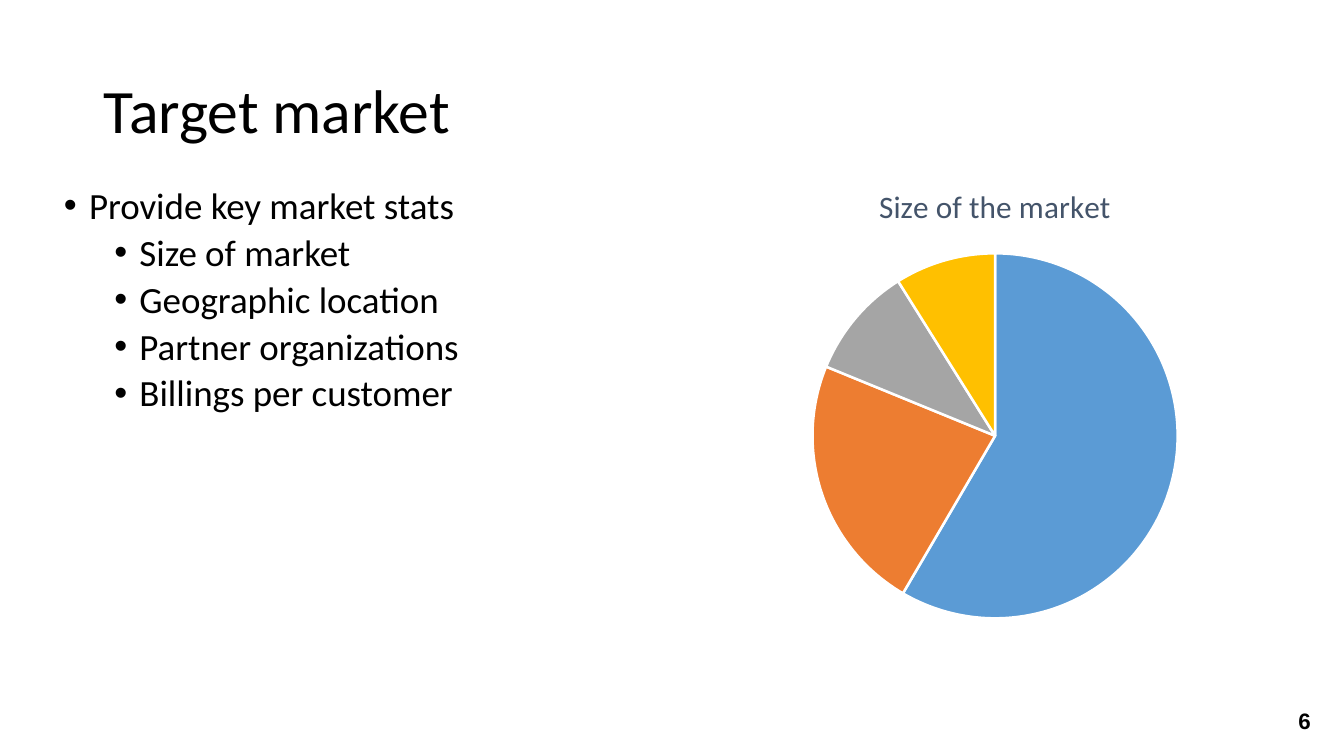
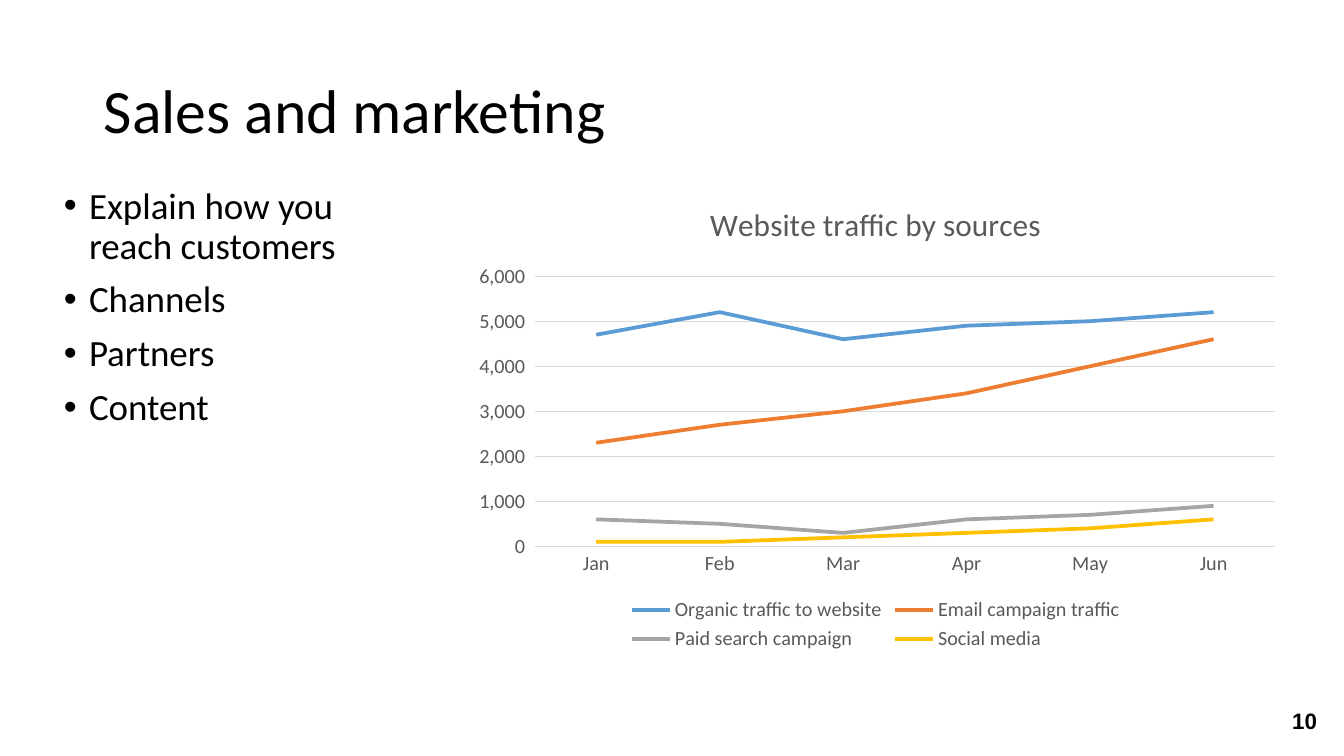
from lxml import etree
from pptx import Presentation
from pptx.chart.data import CategoryChartData
from pptx.dml.color import RGBColor
from pptx.enum.chart import XL_CHART_TYPE, XL_LEGEND_POSITION, XL_MARKER_STYLE, XL_TICK_MARK
from pptx.enum.text import MSO_ANCHOR, PP_ALIGN
from pptx.oxml.ns import qn
from pptx.util import Cm, Pt

PIE, LINE = XL_CHART_TYPE.PIE, XL_CHART_TYPE.LINE
BOTTOM_LEGEND = XL_LEGEND_POSITION.BOTTOM
NO_MARKER, NO_TICK = XL_MARKER_STYLE.NONE, XL_TICK_MARK.NONE
TOP, MIDDLE, BOTTOM = MSO_ANCHOR.TOP, MSO_ANCHOR.MIDDLE, MSO_ANCHOR.BOTTOM
CENTER = PP_ALIGN.CENTER

FONT, NUMBER_FONT = "Calibri", "Arial"
BLACK, WHITE = "000000", "FFFFFF"
GRAY, SLATE, GRID = "595959", "44546A", "D9D9D9"
SERIES_COLORS = ["5B9BD5", "ED7D31", "A5A5A5", "FFC000"]
SLIDE_WIDTH, SLIDE_HEIGHT = 28.22, 15.88
BODY_LEFT, BODY_TOP, BODY_HEIGHT = 1.09, 3.81, 9.96
CHART_RIGHT = 27.13
HANGING = 0.53
# Indent in cm and space before in points, by bullet level
LEVELS = [(0.53, 8.3), (1.59, 4.2)]


def color(value):
    return RGBColor.from_string(value)


def style_font(font, size, value=BLACK, name=FONT, bold=False):
    font.size, font.name, font.bold = Pt(size), name, bold
    font.color.rgb = color(value)


def add_frame(slide, left, top, width, height, anchor=TOP):
    box = slide.shapes.add_textbox(Cm(left), Cm(top), Cm(width), Cm(height))
    frame = box.text_frame
    frame.word_wrap = True
    frame.vertical_anchor = anchor
    return frame


def add_span(para, text, size, **style):
    span = para.add_run()
    span.text = text
    style_font(span.font, size, **style)


def add_page(deck, title, number):
    """Add a slide with the shared title and page number."""
    page = deck.slides.add_slide(deck.slide_layouts[6])
    para = add_frame(page, 1.93, 0.84, 24.33, 3.07, MIDDLE).paragraphs[0]
    para.line_spacing = 0.9
    add_span(para, title, 36.7)

    frame = add_frame(page, 26.57, 14.88, 1.65, 0.53, BOTTOM)
    frame.margin_left = frame.margin_right = frame.margin_top = frame.margin_bottom = 0
    para = frame.paragraphs[0]
    para.alignment = CENTER
    add_span(para, str(number), 13.3, name=NUMBER_FONT, bold=True)
    return page


def add_bullets(page, width, items):
    """Add a bullet list from (level, text) pairs."""
    frame = add_frame(page, BODY_LEFT, BODY_TOP, width, BODY_HEIGHT)
    for index, (level, text) in enumerate(items):
        para = frame.add_paragraph() if index else frame.paragraphs[0]
        indent, space = LEVELS[level]
        para.level = level
        para.line_spacing = 0.9
        para.space_before = Pt(space)
        properties = para._p.get_or_add_pPr()
        properties.set("marL", str(Cm(indent)))
        properties.set("indent", str(-Cm(HANGING)))
        etree.SubElement(properties, qn("a:buFont"), typeface="Arial")
        etree.SubElement(properties, qn("a:buChar"), char="•")
        add_span(para, text, 22)


def place_plot(chart, **bounds):
    """Fix the inner plot area, with x, y, w and h as fractions of the chart."""
    area = chart._chartSpace.find(".//" + qn("c:plotArea"))
    for layout in area.findall(qn("c:layout")):
        area.remove(layout)
    layout = etree.Element(qn("c:layout"))
    area.insert(0, layout)
    manual = etree.SubElement(layout, qn("c:manualLayout"))
    settings = {"layoutTarget": "inner", "xMode": "edge", "yMode": "edge", **bounds}
    for tag, value in settings.items():
        etree.SubElement(manual, qn("c:" + tag), val=str(value))


def add_chart(page, kind, left, top, title, title_color, categories, series):
    data = CategoryChartData()
    data.categories = categories
    for name, values in series:
        data.add_series(name, values)
    chart = page.shapes.add_chart(
        kind, Cm(left), Cm(top), Cm(CHART_RIGHT - left), Cm(BODY_HEIGHT), data
    ).chart
    style_font(chart.font, 10)
    chart.has_title = True
    add_span(chart.chart_title.text_frame.paragraphs[0], title, 18.6, value=title_color)
    chart.chart_title.include_in_layout = False
    chart.has_legend = False
    return chart


def add_pie(page, title, categories, series):
    chart = add_chart(page, PIE, 14.66, 3.43, title, SLATE, categories, [series])
    plot = chart.plots[0]
    plot.vary_by_categories = True
    for index, value in enumerate(SERIES_COLORS):
        shape = plot.series[0].points[index].format
        shape.fill.solid()
        shape.fill.fore_color.rgb = color(value)
        shape.line.color.rgb = color(WHITE)
        shape.line.width = Pt(1.5)
    place_plot(chart, x=0.19, y=0.19, w=0.62, h=0.77)


def style_axis_line(line):
    line.color.rgb = color(GRID)
    line.width = Pt(0.75)


def add_lines(page, title, categories, series):
    chart = add_chart(page, LINE, 9.65, BODY_TOP, title, GRAY, categories, series)
    plot = chart.plots[0]
    plot.vary_by_categories = False
    for item, value in zip(plot.series, SERIES_COLORS):
        item.smooth = False
        item.marker.style = NO_MARKER
        item.format.line.color.rgb = color(value)
        item.format.line.width = Pt(2.25)

    months, visits = chart.category_axis, chart.value_axis
    for axis in (months, visits):
        axis.major_tick_mark = axis.minor_tick_mark = NO_TICK
        style_font(axis.tick_labels.font, 12, GRAY)
    style_axis_line(months.format.line)
    style_axis_line(visits.major_gridlines.format.line)
    visits.format.line.fill.background()
    visits.minimum_scale, visits.maximum_scale, visits.major_unit = 0, 6000, 1000
    visits.tick_labels.number_format = r"#,##0_);\(#,##0\)"
    visits.tick_labels.number_format_is_linked = False

    chart.has_legend = True
    chart.legend.position = BOTTOM_LEGEND
    chart.legend.include_in_layout = False
    style_font(chart.legend.font, 12, GRAY)
    place_plot(chart, x=0.09, y=0.2, w=0.89, h=0.57)


def main():
    deck = Presentation()
    deck.slide_width, deck.slide_height = Cm(SLIDE_WIDTH), Cm(SLIDE_HEIGHT)

    market = add_page(deck, "Target market", 6)
    add_bullets(market, 12.45, [
        (0, "Provide key market stats"),
        (1, "Size of market"),
        (1, "Geographic location"),
        (1, "Partner organizations"),
        (1, "Billings per customer"),
    ])
    add_pie(market, "Size of the market", ["1", "2", "3", "4"],
            ("Series 1", [59, 23, 10, 9]))

    sales = add_page(deck, "Sales and marketing", 10)
    add_bullets(sales, 7.39, [
        (0, "Explain how you reach customers"),
        (0, "Channels"),
        (0, "Partners"),
        (0, "Content"),
    ])
    add_lines(sales, "Website traffic by sources",
              ["Jan", "Feb", "Mar", "Apr", "May", "Jun"], [
                  ("Organic traffic to website", [4700, 5200, 4600, 4900, 5000, 5200]),
                  ("Email campaign traffic", [2300, 2700, 3000, 3400, 4000, 4600]),
                  ("Paid search campaign", [600, 500, 300, 600, 700, 900]),
                  ("Social media", [100, 100, 200, 300, 400, 600]),
              ])

    deck.save("out.pptx")


if __name__ == "__main__":
    main()
